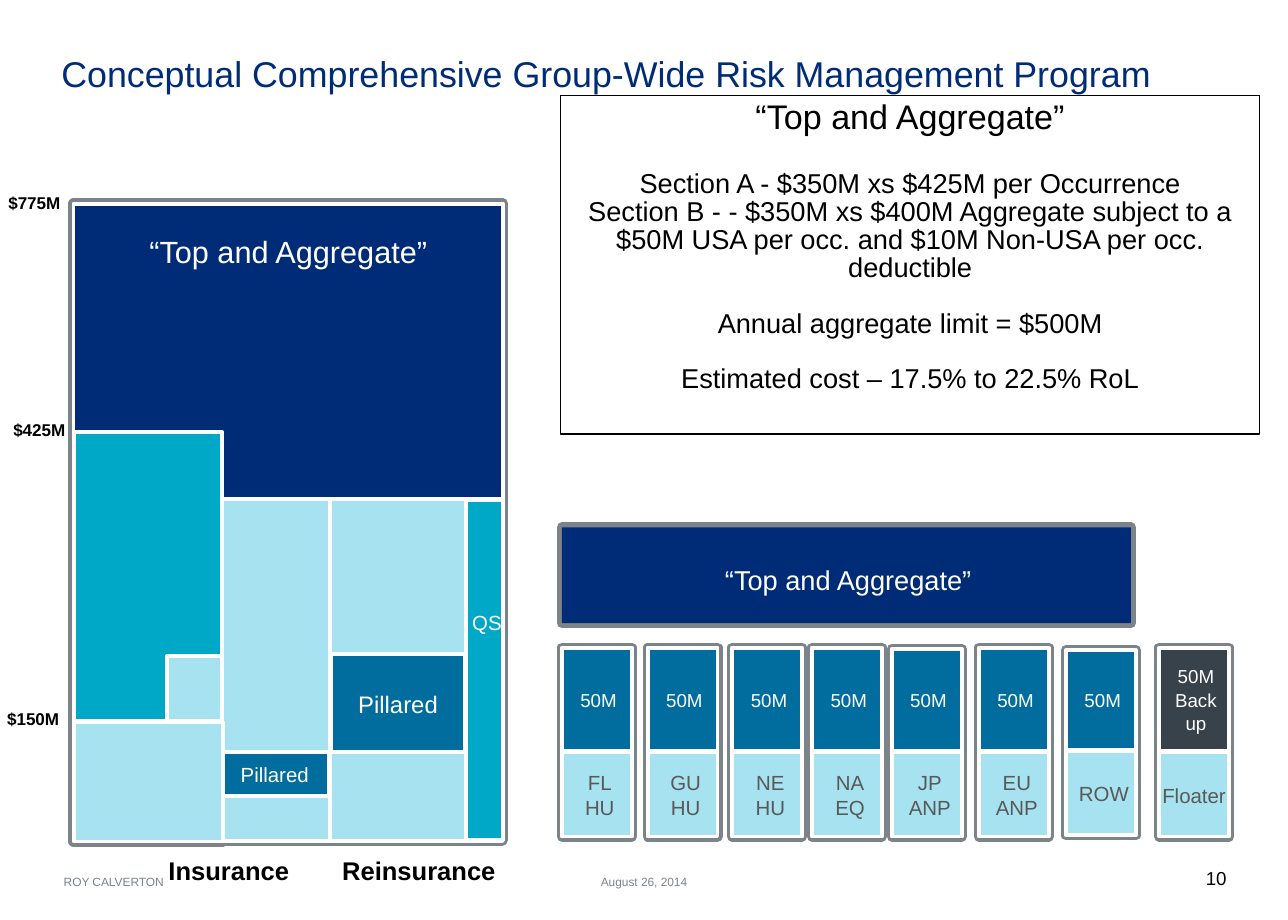
from pptx import Presentation
from pptx.dml.color import RGBColor
from pptx.enum.shapes import MSO_SHAPE as SHAPE
from pptx.enum.text import MSO_ANCHOR as ANCHOR, PP_ALIGN as ALIGN
from pptx.util import Inches, Pt

NAVY = RGBColor(0x00, 0x2C, 0x77)
BLUE = RGBColor(0x00, 0x6D, 0x9E)
TEAL = RGBColor(0x00, 0xA8, 0xC8)
PALE = RGBColor(0xA6, 0xE2, 0xEF)
SLATE = RGBColor(0x37, 0x42, 0x4A)
GREY = RGBColor(0x7C, 0x84, 0x8A)
DARK = RGBColor(0x59, 0x59, 0x59)
BLACK = RGBColor(0x00, 0x00, 0x00)
WHITE = RGBColor(0xFF, 0xFF, 0xFF)

TITLE = "Conceptual Comprehensive Group-Wide Risk Management Program"
LAYER = "“Top and Aggregate”"

# left, top, width, height, fill, text, size
TOWER = [
    (1.8, 4.03, 0.9, 2.83, PALE, "", 12),
    (1.8, 6.13, 0.88, 0.36, BLUE, "Pillared", 12),
    (2.69, 4.06, 1.4, 2.8, PALE, "", 12),
    (3.8, 4.08, 0.3, 2.77, TEAL, "", 12),
    (0.6, 1.66, 3.5, 2.41, NAVY, "", 18),
    (0.6, 5.89, 1.22, 0.97, PALE, "", 12),
    (0.6, 3.52, 1.21, 2.36, TEAL, "", 12),
    (2.7, 5.33, 1.09, 0.8, BLUE, "Pillared", 14),
    (1.36, 5.35, 0.45, 0.53, PALE, "", 12),
]

# left, pillar top, base top, upper text, lower text, upper fill
PILLARS = [
    (4.58, 5.28, 6.13, "50M", "FL\nHU", BLUE),
    (5.28, 5.28, 6.13, "50M", "GU\nHU", BLUE),
    (5.97, 5.28, 6.13, "50M", "NE\nHU", BLUE),
    (6.62, 5.28, 6.13, "50M", "NA\nEQ", BLUE),
    (7.27, 5.29, 6.13, "50M", "JP\nANP", BLUE),
    (7.98, 5.28, 6.13, "50M", "EU\nANP", BLUE),
    (9.45, 5.28, 6.13, "50M\nBack\nup", "Floater", SLATE),
    (8.69, 5.3, 6.12, "50M", "ROW", BLUE),
]
PILLAR_WIDTH, BASE_HEIGHT = 0.57, 0.69
BANNER = (4.58, 4.3, 4.64, 0.78)

# text, left, top, width, height, size, colour, bold, alignment
LABELS = [
    (TITLE, 0.5, 0.47, 9.5, 0.4, 21, NAVY, False, ALIGN.LEFT),
    ("ROY CALVERTON", 0.52, 7.15, 3.16, 0.11, 7, GREY, False, ALIGN.LEFT),
    ("August 26, 2014", 4.66, 7.15, 1.18, 0.12, 7, GREY, False, ALIGN.CENTER),
    ("10", 9.51, 7.09, 0.49, 0.18, 11, BLACK, False, ALIGN.RIGHT),
    ("Insurance", 1.37, 7.01, 0.99, 0.25, 15, BLACK, True, ALIGN.CENTER),
    ("Reinsurance", 2.68, 7.01, 1.47, 0.25, 15, BLACK, True, ALIGN.CENTER),
    ("$775M", 0, 1.59, 0.56, 0.17, 10, BLACK, True, ALIGN.CENTER),
    ("$425M", 0.04, 3.44, 0.56, 0.17, 10, BLACK, True, ALIGN.CENTER),
    ("$150M", 0, 5.8, 0.54, 0.17, 10, BLACK, True, ALIGN.CENTER),
    (LAYER, 0.74, 1.94, 3.22, 0.3, 18, WHITE, False, ALIGN.CENTER),
    ("QS", 3.82, 5, 0.3, 0.2, 12, WHITE, False, ALIGN.CENTER),
]

# text, size, space before
TERMS = [
    (LAYER, 20, 0),
    ("Section A - $350M xs $425M per Occurrence", 16, 20),
    ("Section B - - $350M xs $400M Aggregate subject to a $50M USA per occ. "
     "and $10M Non-USA per occ. deductible", 16, 0),
    ("Annual aggregate limit = $500M", 16, 16),
    ("Estimated cost – 17.5% to 22.5% RoL", 16, 16),
]

deck = Presentation()
deck.slide_width, deck.slide_height = Inches(10.5), Inches(7.5)
slide = deck.slides.add_slide(deck.slide_layouts[6])


def style(paragraph, size, colour, bold=False, align=ALIGN.CENTER, spacing=0.86):
    paragraph.alignment = align
    paragraph.line_spacing = spacing
    for run in paragraph.runs:
        run.font.name = "Arial"
        run.font.size = Pt(size)
        run.font.bold = bold
        run.font.color.rgb = colour


def set_margins(frame, left=0, top=0):
    frame.margin_left, frame.margin_top = Inches(left), Inches(top)
    frame.margin_right = frame.margin_bottom = 0


def add_block(box, fill, line, line_width):
    block = slide.shapes.add_shape(SHAPE.RECTANGLE, *map(Inches, box))
    block.shadow.inherit = False
    if fill is None:
        block.fill.background()
    else:
        block.fill.solid()
        block.fill.fore_color.rgb = fill
    if line is None:
        block.line.fill.background()
    else:
        block.line.color.rgb = line
        block.line.width = Pt(line_width)
    return block


def write_block(block, text, size, colour, left=0, top=0):
    frame = block.text_frame
    frame.text = text
    frame.word_wrap = False
    frame.vertical_anchor = ANCHOR.MIDDLE
    set_margins(frame, left, top)
    for paragraph in frame.paragraphs:
        style(paragraph, size, colour, spacing=1.05)


faces = [(block[:4], *block[4:], WHITE, 0) for block in TOWER]
for left, top, base_top, limit, region, fill in PILLARS:
    shift = 0 if region == "Floater" else 0.05
    base = (left, base_top, PILLAR_WIDTH, BASE_HEIGHT)
    pillar = (left, top, PILLAR_WIDTH, base_top - 0.01 - top)
    faces.append((base, PALE, region, 12, DARK, shift))
    faces.append((pillar, fill, limit, 11, WHITE, 0.03))

for box in [face[0] for face in faces] + [BANNER]:
    add_block(box, GREY, GREY, 6)

for box, fill, text, size, colour, shift in faces:
    face = add_block(box, fill, WHITE, 2.25)
    if text:
        write_block(face, text, size, colour, left=shift)

banner = add_block(BANNER, NAVY, None, 0)
write_block(banner, LAYER, 16, WHITE, left=0.03, top=0.06)

for text, left, top, width, height, size, colour, bold, align in LABELS:
    label = slide.shapes.add_textbox(*map(Inches, (left, top, width, height)))
    frame = label.text_frame
    frame.text = text
    frame.word_wrap = True
    set_margins(frame)
    style(frame.paragraphs[0], size, colour, bold, align)

terms = add_block((4.57, 0.78, 5.7, 2.76), None, BLACK, 0.75).text_frame
terms.word_wrap = True
terms.vertical_anchor = ANCHOR.TOP
terms.text = "\n".join(text for text, size, gap in TERMS)
for paragraph, (text, size, gap) in zip(terms.paragraphs, TERMS):
    style(paragraph, size, BLACK)
    paragraph.space_before = Pt(gap)

deck.save("out.pptx")
